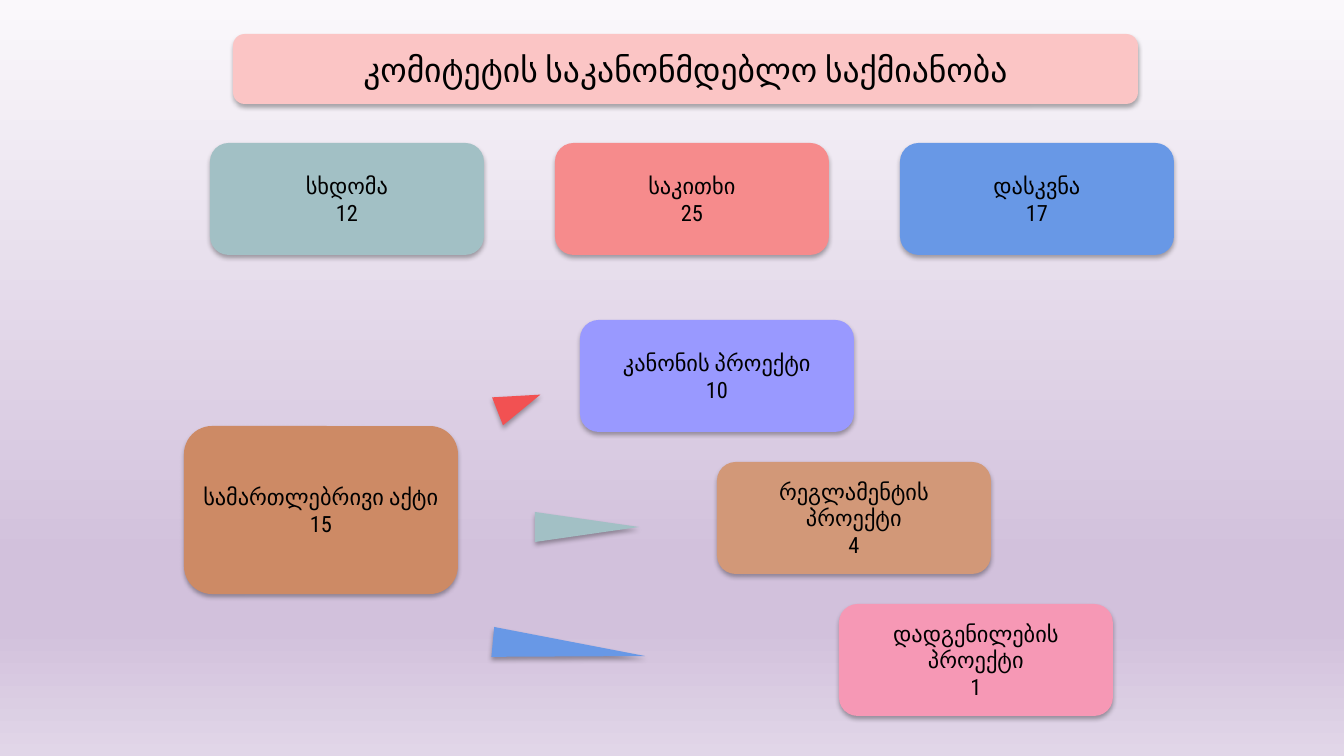
from lxml import etree
from pptx import Presentation
from pptx import util as u
from pptx.dml.color import RGBColor
from pptx.enum import shapes, text
from pptx.oxml import ns

PX = 914400 / 100.8
FONT = "Roboto Condensed"
COLORS = {
    "title": "FBC5C5", "teal": "A2C0C5", "coral": "F68B8C", "blue": "6898E6",
    "act": "CD8A65", "violet": "9999FF", "tan": "D29878", "pink": "F698B5",
    "red": "F25152", "ink": "000000",
    "sky": "FAF8FB", "lilac": "D2C1DC", "haze": "E1D6E8",
}
BACKDROP = [(0, "sky"), (74, "lilac"), (83, "lilac"), (100, "haze")]
COUNTS = [("სხდომა", "12", "teal"), ("საკითხი", "25", "coral"), ("დასკვნა", "17", "blue")]
PROJECTS = [
    (0, "კანონის პროექტი", "10", "violet"),
    (137, "რეგლამენტის პროექტი", "4", "tan"),
    (259, "დადგენილების პროექტი", "1", "pink"),
]
POINTERS = [
    (335, -23, 46, 68.7, "red"),
    (403, 101, 104, 90, "teal"),
    (385, 223, 153, 95.3, "blue"),
]
CARD_W, CARD_H = 274, 112


def px(length):
    """Turn pixels into EMU."""
    return u.Emu(round(length * PX))


def add_child(parent, tag, **attributes):
    """Append a drawing element with the given attributes."""
    child = etree.SubElement(parent, ns.qn(tag))
    for name, value in attributes.items():
        child.set(name, str(value))
    return child


def paint_background(page):
    """Fill the page with a vertical four-stop gradient."""
    fill = page.background.fill
    fill.gradient()
    fill.gradient_angle = 270
    stops = next(page.element.iter(ns.qn("a:gsLst")))
    for stop in list(stops):
        stops.remove(stop)
    for position, color in BACKDROP:
        stop = add_child(stops, "a:gs", pos=position * 1000)
        add_child(stop, "a:srgbClr", val=COLORS[color])


def add_block(page, kind, left, top, width, height, color):
    """Add a borderless shape with a soft shadow below it."""
    block = page.shapes.add_shape(kind, px(left), px(top), px(width), px(height))
    block.fill.solid()
    block.fill.fore_color.rgb = RGBColor.from_string(COLORS[color])
    block.line.fill.background()
    block.shadow.inherit = False
    effects = block.element.spPr.find(ns.qn("a:effectLst"))
    shadow = add_child(effects, "a:outerShdw", blurRad=u.Pt(3.5), dist=u.Pt(2.2),
                       dir=5400000, algn="ctr", rotWithShape=0)
    ink = add_child(shadow, "a:srgbClr", val=COLORS["ink"])
    add_child(ink, "a:alpha", val=32000)
    return block


def add_card(page, left, top, width, height, lines, color, size=16):
    """Add a rounded card with centred lines of text."""
    card = add_block(page, shapes.MSO_SHAPE.ROUNDED_RECTANGLE,
                     left, top, width, height, color)
    frame = card.text_frame
    frame.word_wrap = True
    frame.vertical_anchor = text.MSO_ANCHOR.MIDDLE
    for index, line in enumerate(lines):
        para = frame.add_paragraph() if index else frame.paragraphs[0]
        para.alignment = text.PP_ALIGN.CENTER
        span = para.add_run()
        span.text = line
        span.font.name = FONT
        span.font.size = u.Pt(size)
        span.font.color.rgb = RGBColor.from_string(COLORS["ink"])


def add_counts(page, left, top, step):
    """Place the row of activity counts."""
    for index, (label, count, color) in enumerate(COUNTS):
        add_card(page, left + index * step, top, CARD_W, CARD_H, [label, count], color)


def add_acts(page, left, top):
    """Place the legal acts card and the pointers beside it."""
    add_card(page, left, top, CARD_W, 168, ["სამართლებრივი აქტი", "15"], "act")
    base = 30
    for dx, dy, length, angle, color in POINTERS:
        pointer = add_block(page, shapes.MSO_SHAPE.ISOSCELES_TRIANGLE,
                            left + dx - base / 2, top + dy - length / 2,
                            base, length, color)
        pointer.rotation = angle


def add_projects(page, left, top, step):
    """Place the staircase of project cards."""
    for index, (dx, label, count, color) in enumerate(PROJECTS):
        add_card(page, left + dx, top + index * step, CARD_W, CARD_H,
                 [label, count], color)


def main():
    """Build and save the slide."""
    deck = Presentation()
    deck.slide_width, deck.slide_height = px(1344), px(756)
    page = deck.slides.add_slide(deck.slide_layouts[6])
    paint_background(page)
    add_card(page, 233, 34, 905, 70, ["კომიტეტის საკანონმდებლო საქმიანობა"], "title", 24)
    add_counts(page, 210, 143, 345)
    add_acts(page, 184, 426)
    add_projects(page, 580, 320, 142)
    deck.save("out.pptx")


if __name__ == "__main__":
    main()
